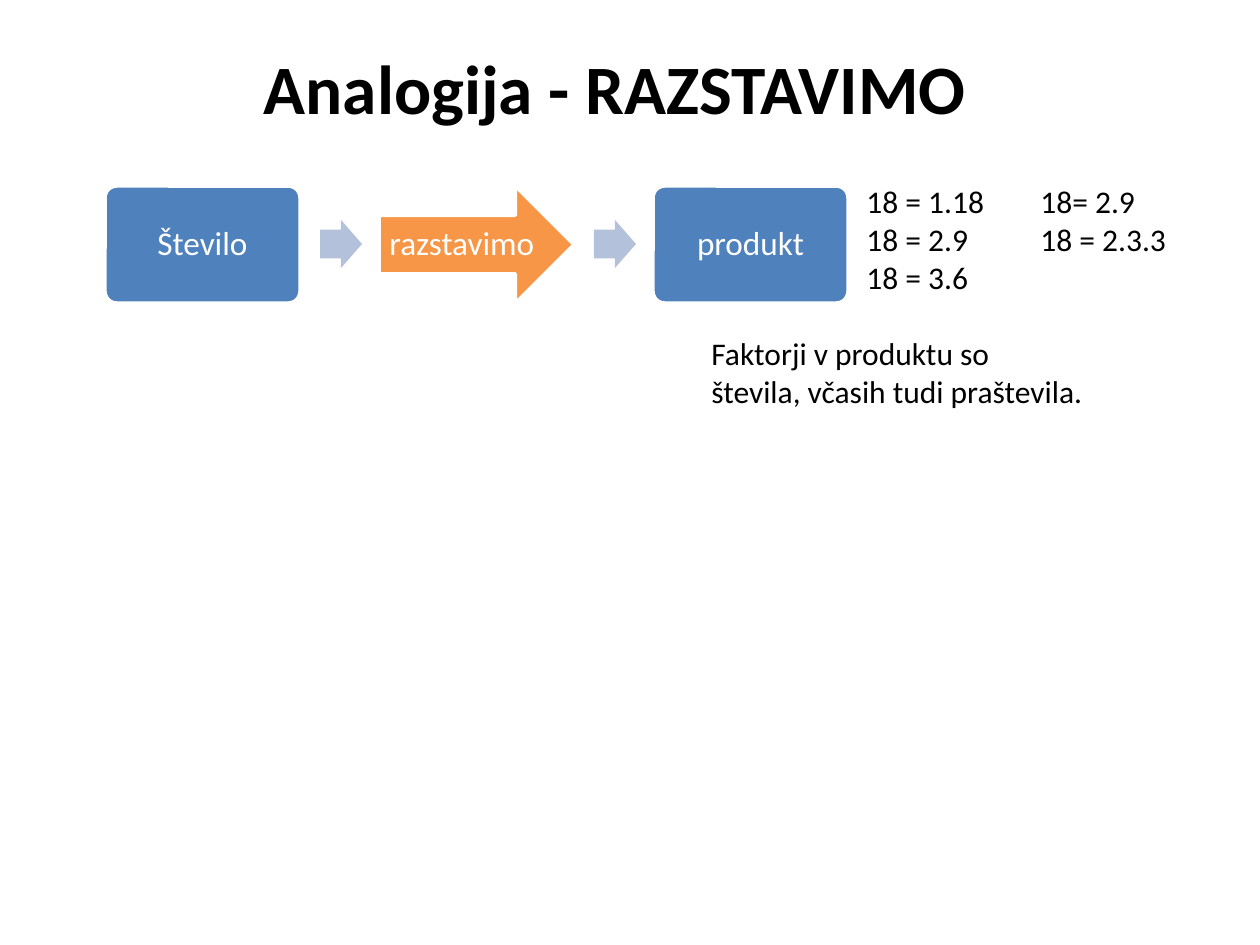
"""Build the slide that shows how a number is factored into a product."""
from dataclasses import dataclass

from lxml import etree
from pptx import Presentation
from pptx.dml.color import RGBColor
from pptx.enum.shapes import MSO_SHAPE
from pptx.enum.text import MSO_ANCHOR, PP_ALIGN
from pptx.oxml.ns import qn
from pptx.shapes.autoshape import Shape
from pptx.slide import Slide
from pptx.text.text import _Paragraph
from pptx.util import Emu, Pt

PX_PER_INCH = 126
FONT = "Calibri"
BLACK = RGBColor(0x00, 0x00, 0x00)
WHITE = RGBColor(0xFF, 0xFF, 0xFF)
BLUE = RGBColor(0x4F, 0x81, 0xBD)
ORANGE = RGBColor(0xF7, 0x96, 0x46)
PALE_BLUE = RGBColor(0xB3, 0xC1, 0xDB)
ROUNDED = MSO_SHAPE.ROUNDED_RECTANGLE
ARROW = MSO_SHAPE.RIGHT_ARROW
MIDDLE = MSO_ANCHOR.MIDDLE
CENTER = PP_ALIGN.CENTER
LEFT = PP_ALIGN.LEFT

STEP_LEFT, STEP_TOP, STEP_WIDTH, STEP_HEIGHT = 105, 186, 195, 117
STEP_PITCH = 274
LINK_OFFSET, LINK_WIDTH, LINK_HEIGHT = 215, 42, 48
TAB_STOPS = (155, 329)


@dataclass(frozen=True)
class Step:
    """One stage of the process."""

    text: str
    kind: MSO_SHAPE
    fill: RGBColor
    adjustments: tuple[float, ...]


@dataclass(frozen=True)
class Line:
    """One line of the explanation."""

    text: str
    space_before: int = 0


STEPS = (
    Step("Število", ROUNDED, BLUE, (0.1,)),
    Step("razstavimo", ARROW, ORANGE, (0.5, 0.5)),
    Step("produkt", ROUNDED, BLUE, (0.1,)),
)
LINES = (
    Line("\t18 = 1.18\t18= 2.9"),
    Line("\t18 = 2.9\t18 = 2.3.3"),
    Line("\t18 = 3.6"),
    Line("Faktorji v produktu so", 22),
    Line("števila, včasih tudi praštevila."),
)


def px(length: int) -> Emu:
    """Turn pixels into EMU."""
    return Emu(round(length * 914400 / PX_PER_INCH))


def add_run(paragraph: _Paragraph, text: str, size: float, color: RGBColor,
            bold: bool = False) -> None:
    """Add one formatted run."""
    run = paragraph.add_run()
    run.text = text
    run.font.name = FONT
    run.font.size = Pt(size)
    run.font.bold = bold
    run.font.color.rgb = color


def add_filled_shape(slide: Slide, kind: MSO_SHAPE, left: int, top: int, width: int,
                     height: int, fill: RGBColor, adjustments: tuple[float, ...]) -> Shape:
    """Add a flat shape without an outline."""
    shape = slide.shapes.add_shape(kind, px(left), px(top), px(width), px(height))
    shape.shadow.inherit = False
    shape.fill.solid()
    shape.fill.fore_color.rgb = fill
    shape.line.fill.background()
    for index, value in enumerate(adjustments):
        shape.adjustments[index] = value
    return shape


def add_step(slide: Slide, step: Step, left: int) -> None:
    """Add one labelled stage."""
    shape = add_filled_shape(slide, step.kind, left, STEP_TOP, STEP_WIDTH, STEP_HEIGHT,
                             step.fill, step.adjustments)
    shape.line.color.rgb = WHITE
    shape.line.width = Pt(2)
    frame = shape.text_frame
    frame.word_wrap = True
    frame.vertical_anchor = MIDDLE
    frame.margin_left = frame.margin_right = px(9)
    frame.margin_top = frame.margin_bottom = px(9)
    paragraph = frame.paragraphs[0]
    paragraph.alignment = CENTER
    paragraph.line_spacing = 0.9
    add_run(paragraph, step.text, 19, WHITE)


def add_link(slide: Slide, left: int) -> None:
    """Add the small arrow between two stages."""
    top = STEP_TOP + (STEP_HEIGHT - LINK_HEIGHT) // 2
    add_filled_shape(slide, ARROW, left, top, LINK_WIDTH, LINK_HEIGHT, PALE_BLUE, (0.6, 0.5))


def set_tab_stops(paragraph: _Paragraph) -> None:
    """Give a paragraph the tab stops of the factor columns."""
    properties = paragraph._p.get_or_add_pPr()
    tab_list = etree.SubElement(properties, qn("a:tabLst"))
    for position in TAB_STOPS:
        etree.SubElement(tab_list, qn("a:tab"), pos=str(px(position)), algn="l")


def add_explanation(slide: Slide) -> None:
    """Add the factorisations and the remark below them."""
    frame = slide.shapes.add_textbox(px(699), px(175), px(496), px(242)).text_frame
    frame.word_wrap = True
    frame.vertical_anchor = MIDDLE
    for index, line in enumerate(LINES):
        paragraph = frame.add_paragraph() if index else frame.paragraphs[0]
        paragraph.alignment = LEFT
        paragraph.space_before = Pt(line.space_before)
        if "\t" in line.text:
            set_tab_stops(paragraph)
        add_run(paragraph, line.text, 18, BLACK)


def format_title(slide: Slide) -> None:
    """Place and fill the title."""
    title = slide.shapes.title
    title.left, title.top, title.width, title.height = px(48), px(37), px(1134), px(100)
    title.text_frame.vertical_anchor = MIDDLE
    paragraph = title.text_frame.paragraphs[0]
    paragraph.alignment = CENTER
    add_run(paragraph, "Analogija - RAZSTAVIMO", 39.6, BLACK, bold=True)


def main() -> None:
    """Build and save the presentation."""
    presentation = Presentation()
    presentation.slide_width, presentation.slide_height = px(1260), px(945)
    slide = presentation.slides.add_slide(presentation.slide_layouts[5])
    format_title(slide)
    for index, step in enumerate(STEPS):
        left = STEP_LEFT + index * STEP_PITCH
        add_step(slide, step, left)
        if index < len(STEPS) - 1:
            add_link(slide, left + LINK_OFFSET)
    add_explanation(slide)
    presentation.save("out.pptx")


if __name__ == "__main__":
    main()
